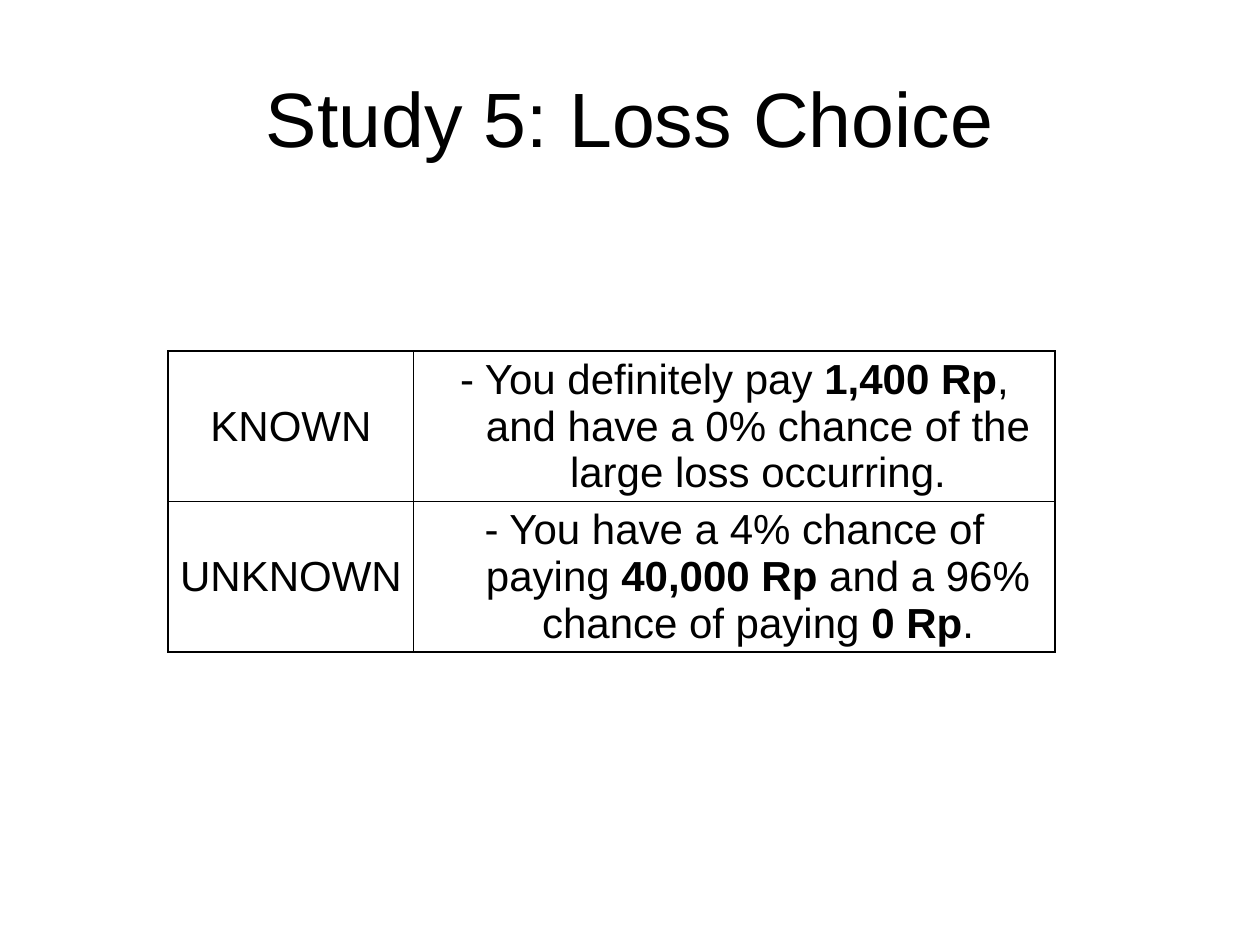
from lxml.etree import SubElement as Sub
from pptx import Presentation as Deck
from pptx.dml.color import RGBColor as Rgb
from pptx.enum.text import MSO_ANCHOR as Anchor, PP_ALIGN as Align
from pptx.oxml.ns import qn
from pptx.util import Cm, Pt

BLACK = Rgb(0, 0, 0)
WHITE = Rgb(255, 255, 255)

# Each cell is a list of (text, bold) runs
ROWS = [
    [
        [("KNOWN", False)],
        [("- You definitely pay ", False), ("1,400 Rp", True),
         (", and have a 0% chance of the large loss occurring.", False)],
    ],
    [
        [("UNKNOWN", False)],
        [("- You have a 4% chance of paying ", False), ("40,000 Rp", True),
         (" and a 96% chance of paying ", False), ("0 Rp", True),
         (".", False)],
    ],
]


class Page:
    font = "Arial"
    ink = BLACK
    hang = Cm(0.95)

    def __init__(self, deck):
        self.slide = deck.slides.add_slide(deck.slide_layouts[5])
        fill = self.slide.background.fill
        fill.solid()
        fill.fore_color.rgb = WHITE

    def text(self, para, runs, size):
        para.alignment = Align.CENTER
        for words, bold in runs:
            run = para.add_run()
            run.text = words
            run.font.name = self.font
            run.font.size = Pt(size)
            run.font.bold = bold
            run.font.color.rgb = self.ink

    def title(self, words, left, top, width, height):
        box = self.slide.shapes.title
        box.left, box.top = Cm(left), Cm(top)
        box.width, box.height = Cm(width), Cm(height)
        box.text_frame.vertical_anchor = Anchor.MIDDLE
        self.text(box.text_frame.paragraphs[0], [(words, False)], 44)

    def border(self, cell):
        props = cell._tc.get_or_add_tcPr()
        for side in ("lnL", "lnR", "lnT", "lnB"):
            line = Sub(props, qn("a:" + side), w=str(Pt(1)))
            fill = Sub(line, qn("a:solidFill"))
            Sub(fill, qn("a:srgbClr"), val=str(self.ink))

    def cell(self, cell, runs):
        cell.vertical_anchor = Anchor.MIDDLE
        cell.margin_left = cell.margin_right = Cm(0.18)
        cell.margin_top = cell.margin_bottom = Cm(0.1)
        self.border(cell)
        cell.fill.background()
        para = cell.text_frame.paragraphs[0]
        # Hanging indent
        props = para._p.get_or_add_pPr()
        props.set("marL", str(self.hang))
        props.set("indent", str(-self.hang))
        self.text(para, runs, 24)

    def table(self, rows, left, top, widths, height):
        frame = self.slide.shapes.add_table(
            len(rows), len(widths), Cm(left), Cm(top),
            Cm(sum(widths)), Cm(height * len(rows)))
        grid = frame.table
        grid.first_row = grid.horz_banding = False
        for col, width in zip(grid.columns, widths):
            col.width = Cm(width)
        for r, row in enumerate(rows):
            for c, runs in enumerate(row):
                self.cell(grid.cell(r, c), runs)


def main():
    deck = Deck()
    deck.slide_width, deck.slide_height = Cm(25.4), Cm(19.05)
    page = Page(deck)

    # Heading
    page.title("Study 5: Loss Choice", 1.27, 0.76, 22.86, 3.18)

    # Choice table
    page.table(ROWS, 3.39, 7.08, [4.95, 12.93], 2.62)

    deck.save("out.pptx")


if __name__ == "__main__":
    main()
